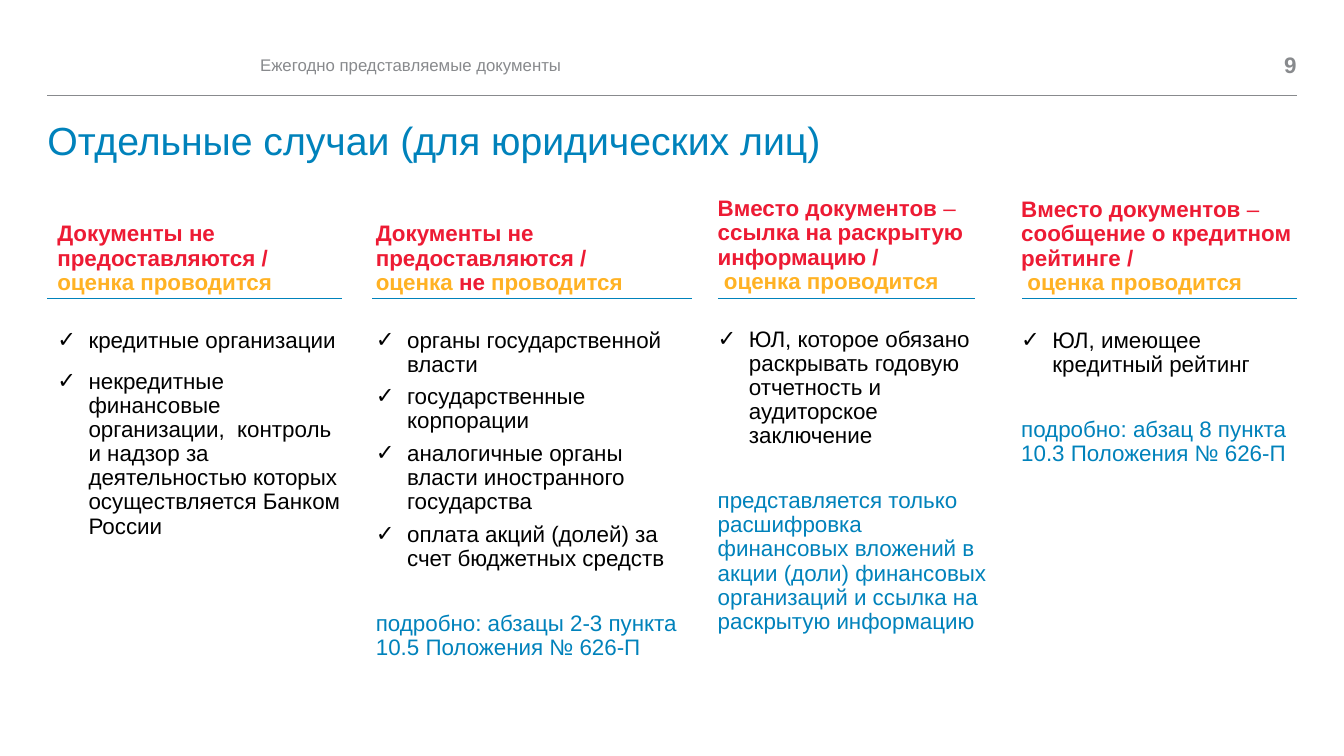
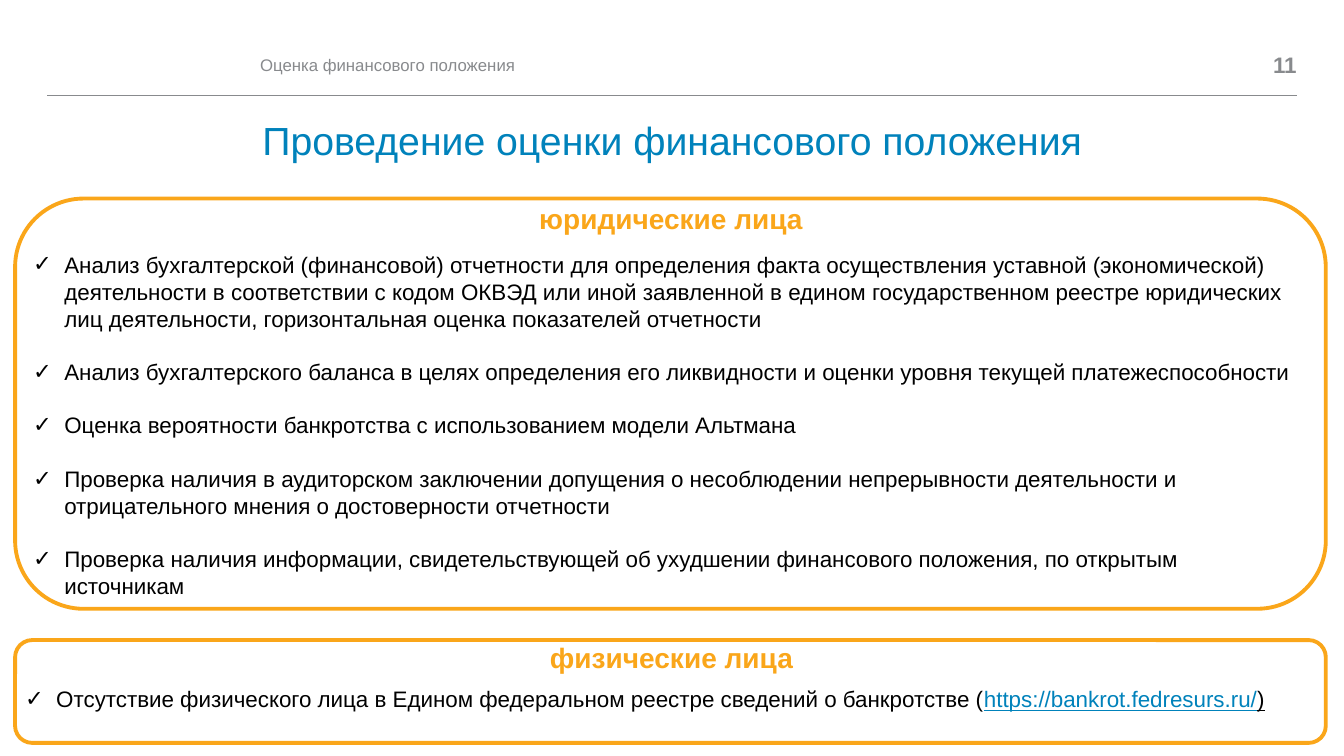
from lxml import etree
from pptx import Presentation
from pptx.dml.color import RGBColor
from pptx.enum.shapes import MSO_CONNECTOR, MSO_SHAPE
from pptx.enum.text import MSO_ANCHOR, PP_ALIGN
from pptx.oxml.ns import qn
from pptx.util import Pt

# Shared style
PX = 9144  # EMU per px, 100 px to the inch
FONT = "Arial"
BLUE, GREY, BLACK = "0082BB", "888A8D", "000000"
RED, YELLOW, ORANGE = "ED1B34", "FFB224", "FAA61A"
LEFT, RIGHT = 47, 1286
HEADER_RULE_Y, COLUMN_RULE_Y = 95, 296
BULLET_INDENT = 31

# Content: a run is a string or (text, changes to the paragraph font)
CASES = {
    "section": "Ежегодно представляемые документы",
    "number": "9",
    "title": "Отдельные случаи (для юридических лиц)",
    "columns": [
        {
            "box": (47, 216, 301), "rule": (47, 339), "gap": 12,
            "heading": ["Документы не предоставляются /\n",
                        ("оценка проводится", {"color": YELLOW})],
            "items": [
                "кредитные организации",
                "некредитные финансовые организации,  контроль и надзор за "
                "деятельностью которых осуществляется Банком России",
            ],
            "note": None,
        },
        {
            "box": (363, 216, 337), "rule": (369, 686), "gap": 6,
            "heading": ["Документы не предоставляются /\n",
                        ("оценка ", {"color": YELLOW}), "не",
                        (" проводится", {"color": YELLOW})],
            "items": [
                "органы государственной власти",
                "государственные корпорации",
                "аналогичные органы власти иностранного государства",
                "оплата акций (долей) за счет бюджетных средств",
            ],
            "note": "подробно: абзацы 2-3 пункта 10.5 Положения № 626-П",
        },
        {
            "box": (702, 191, 291), "rule": (712, 967), "gap": 6,
            "heading": ["Вместо документов ", ("–\n", {"bold": False}),
                        "ссылка на раскрытую информацию /\n",
                        (" оценка проводится", {"color": YELLOW})],
            "items": [
                "ЮЛ, которое обязано раскрывать годовую отчетность и "
                "аудиторское заключение",
            ],
            "note": "представляется только расшифровка финансовых вложений в "
                    "акции (доли) финансовых организаций и ссылка на раскрытую "
                    "информацию",
        },
        {
            "box": (1003, 192, 291), "rule": (1014, 1286), "gap": 6,
            "heading": ["Вместо документов ", ("–\n", {"bold": False}),
                        "сообщение о кредитном рейтинге /\n",
                        (" оценка проводится", {"color": YELLOW})],
            "items": ["ЮЛ, имеющее кредитный рейтинг"],
            "note": "подробно: абзац 8 пункта 10.3 Положения № 626-П",
        },
    ],
}

ASSESSMENT = {
    "section": "Оценка финансового положения",
    "number": "11",
    "title": "Проведение оценки финансового положения",
    "panels": [
        {
            "outline": (15, 197, 1300, 407),
            "heading": "юридические лица", "heading_box": (502, 195, 327, 44),
            "list_box": (23, 244, 1275, 360),
            "items": [
                ["Анализ бухгалтерской (финансовой) отчетности для определения "
                 "факта осуществления уставной (экономической) деятельности в "
                 "соответствии с кодом ОКВЭД или иной заявленной в едином "
                 "государственном реестре юридических лиц деятельности, "
                 "горизонтальная оценка показателей отчетности"],
                ["Анализ бухгалтерского баланса в целях определения его "
                 "ликвидности и оценки уровня текущей платежеспособности"],
                ["Оценка вероятности банкротства с использованием модели "
                 "Альтмана"],
                ["Проверка наличия в аудиторском заключении допущения о "
                 "несоблюдении непрерывности деятельности и отрицательного "
                 "мнения о достоверности отчетности"],
                ["Проверка наличия информации, свидетельствующей об ухудшении "
                 "финансового положения, по открытым источникам"],
            ],
        },
        {
            "outline": (15, 635, 1300, 102),
            "heading": "физические лица", "heading_box": (529, 631, 274, 44),
            "list_box": (15, 675, 1283, 37),
            "items": [
                ["Отсутствие физического лица в Едином федеральном реестре "
                 "сведений о банкротстве (",
                 ("https://bankrot.fedresurs.ru/",
                  {"color": BLUE, "underline": True}),
                 (")", {"underline": True})],
            ],
        },
    ],
}


# Drawing helpers
def rgb(color):
    return RGBColor.from_string(color)


def px(*lengths):
    return [length * PX for length in lengths]


def style_font(font, size=None, color=None, bold=None, underline=None):
    if size:
        font.name, font.size = FONT, Pt(size)
    if color:
        font.color.rgb = rgb(color)
    if bold is not None:
        font.bold = bold
    if underline is not None:
        font.underline = underline


def add_text_frame(slide, box, inset=True, anchor=MSO_ANCHOR.TOP):
    frame = slide.shapes.add_textbox(*px(*box)).text_frame
    frame.word_wrap = True
    frame.vertical_anchor = anchor
    if not inset:
        frame.margin_left = frame.margin_right = 0
        frame.margin_top = frame.margin_bottom = 0
    return frame


def add_bullet(paragraph):
    properties = paragraph._p.get_or_add_pPr()
    properties.set("marL", str(BULLET_INDENT * PX))
    properties.set("indent", str(-BULLET_INDENT * PX))
    etree.SubElement(properties, qn("a:buFont")).set("typeface", FONT)
    etree.SubElement(properties, qn("a:buChar")).set("char", "✓")


def write(frame, runs, size=16, color=BLACK, bold=False, align=PP_ALIGN.LEFT,
          spacing=1.0, before=0, after=0, bullet=False):
    """Fill the first paragraph of the frame, or append one."""
    paragraph = frame.paragraphs[0]
    if paragraph.runs:
        paragraph = frame.add_paragraph()
        paragraph.space_before = Pt(before)
    paragraph.alignment = align
    paragraph.line_spacing = spacing
    paragraph.space_after = Pt(after)
    if bullet:
        add_bullet(paragraph)
    style_font(paragraph.font, size, color, bold)
    for entry in runs:
        text, changes = (entry, {}) if isinstance(entry, str) else entry
        run = paragraph.add_run()
        run.text = text.rstrip("\n")
        style_font(run.font, **changes)
        if text.endswith("\n"):
            paragraph.add_line_break()


def add_rule(slide, left, right, y, color):
    rule = slide.shapes.add_connector(
        MSO_CONNECTOR.STRAIGHT, *px(left, y, right, y))
    rule.line.color.rgb = rgb(color)
    rule.line.width = Pt(0.5)
    etree.SubElement(rule._element.spPr, qn("a:effectLst"))


def add_page(deck, content, title_align=PP_ALIGN.LEFT):
    """Add a slide with the header, its rule and the title."""
    slide = deck.slides.add_slide(deck.slide_layouts[6])
    add_rule(slide, LEFT, RIGHT, HEADER_RULE_Y, GREY)
    section = add_text_frame(slide, (258, 47, 923, 35), False, MSO_ANCHOR.MIDDLE)
    write(section, [content["section"]], 12, GREY)
    number = add_text_frame(slide, (1205, 47, 81, 35), False, MSO_ANCHOR.MIDDLE)
    write(number, [content["number"]], 16, GREY, True, PP_ALIGN.RIGHT)
    title = add_text_frame(slide, (LEFT, 121, RIGHT - LEFT, 51), False)
    write(title, [content["title"]], 28, BLUE, align=title_align, spacing=0.9)
    return slide


# Slides
def build_cases(deck):
    slide = add_page(deck, CASES)
    for column in CASES["columns"]:
        left, top, width = column["box"]
        frame = add_text_frame(slide, (left, top, width, 700 - top))
        write(frame, column["heading"], color=RED, bold=True,
              spacing=0.9, after=24)
        for item in column["items"]:
            write(frame, [item], spacing=0.9, after=column["gap"], bullet=True)
        if column["note"]:
            write(frame, [column["note"]], color=BLUE, spacing=0.9, before=23)
        add_rule(slide, *column["rule"], COLUMN_RULE_Y, BLUE)


def build_assessment(deck):
    slide = add_page(deck, ASSESSMENT, PP_ALIGN.CENTER)
    for panel in ASSESSMENT["panels"]:
        outline = slide.shapes.add_shape(
            MSO_SHAPE.ROUNDED_RECTANGLE, *px(*panel["outline"]))
        outline.shadow.inherit = False
        outline.fill.background()
        outline.line.color.rgb = rgb(ORANGE)
        outline.line.width = Pt(2.75)
        heading = add_text_frame(slide, panel["heading_box"])
        write(heading, [panel["heading"]], 20, ORANGE, True, PP_ALIGN.CENTER)
        checks = add_text_frame(slide, panel["list_box"])
        for item in panel["items"]:
            write(checks, item, before=19, bullet=True)


def main():
    deck = Presentation()
    deck.slide_width, deck.slide_height = px(1333, 750)
    build_cases(deck)
    build_assessment(deck)
    deck.save("out.pptx")


if __name__ == "__main__":
    main()
